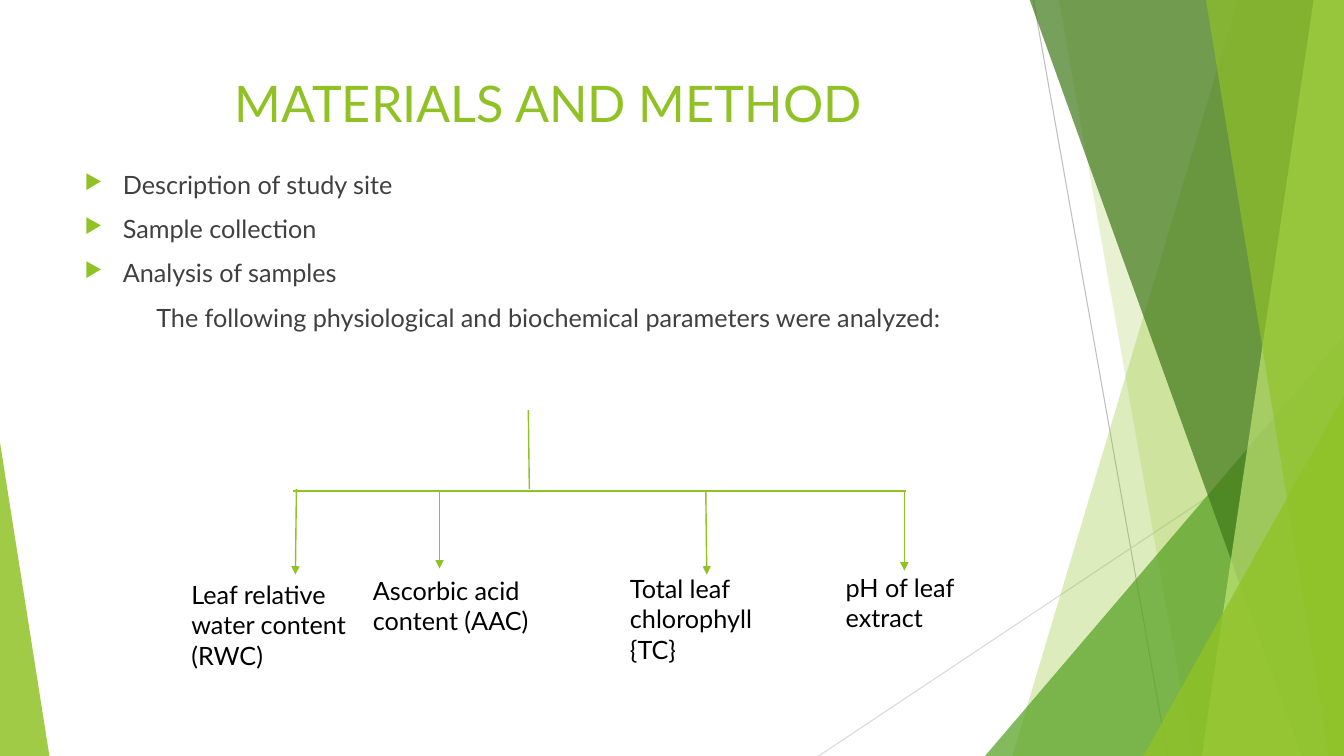
"""Build the "Materials and method" slide with its parameter tree."""
from lxml import etree
from pptx import Presentation
from pptx import util as u
from pptx.dml.color import RGBColor
from pptx.enum import shapes, text
from pptx.oxml.ns import qn

PX = 9144
W, H = 1333, 750
GREEN = RGBColor(0x90, 0xC2, 0x26)
MID_GREEN = RGBColor(0x54, 0xA0, 0x21)
DARK_GREEN = RGBColor(0x3F, 0x78, 0x19)
PALE_GREEN = RGBColor(0xC0, 0xE4, 0x74)
GRAY = RGBColor(0xBF, 0xBF, 0xBF)
LIGHT_GRAY = RGBColor(0xD9, 0xD9, 0xD9)
TEXT_GRAY = RGBColor(0x40, 0x40, 0x40)
BLACK = RGBColor(0, 0, 0)


def write(tf, line, size=18, color=BLACK, align=text.PP_ALIGN.LEFT, before=0, bullet=None, first=True):
    """Write one formatted paragraph into a text frame."""
    tf.word_wrap = True
    tf.vertical_anchor = text.MSO_ANCHOR.TOP
    p = tf.paragraphs[0] if first else tf.add_paragraph()
    p.alignment = align
    p.space_before = u.Pt(before)
    r = p.add_run()
    r.text = line
    r.font.size = u.Pt(size)
    r.font.name = "Lato"
    r.font.color.rgb = color
    if bullet:
        pPr = p._p.get_or_add_pPr()
        pPr.set("marL", str(38 * PX))
        pPr.set("indent", str(-38 * PX))
        clr = etree.SubElement(pPr, qn("a:buClr"))
        etree.SubElement(clr, qn("a:srgbClr"), val=str(GREEN))
        etree.SubElement(pPr, qn("a:buSzPct"), val="80000")
        etree.SubElement(pPr, qn("a:buChar"), char=bullet)


prs = Presentation()
prs.slide_width, prs.slide_height = W * PX, H * PX
s = prs.slides.add_slide(prs.slide_layouts[5])

lines = [
    (1025, 0, 1158, H, GRAY, 0.75, False),
    (W, 403, 812, H, LIGHT_GRAY, 0.75, False),
    (524, 407, 525, 485, GREEN, 1, False),
    (291, 487, 899, 487, GREEN, 1, False),
    (294, 485, 293, 570, GREEN, 1, True),
    (436, 487, 436, 564, GREEN, 1, True),
    (700, 487, 701, 570, GREEN, 1, True),
    (897, 487, 897, 566, GREEN, 1, True),
]
for x1, y1, x2, y2, color, width, arrow in lines:
    ln = s.shapes.add_connector(shapes.MSO_CONNECTOR.STRAIGHT, x1 * PX, y1 * PX, x2 * PX, y2 * PX)
    ln.line.color.rgb = color
    ln.line.width = u.Pt(width)
    if arrow:
        etree.SubElement(ln.line._get_or_add_ln(), qn("a:tailEnd"), type="triangle")
    etree.SubElement(ln._element.spPr, qn("a:effectLst"))

panels = [
    ("band", (1228, 1004), GREEN, 30),
    ("band", (1050, 1183), GREEN, 20),
    ("triangle", (977, 333, 356, 1), MID_GREEN, 72),
    ("band", (1021, 1291), DARK_GREEN, 70),
    ("band", (1303, 1192), PALE_GREEN, 70),
    ("band", (1196, 1318), GREEN, 65),
    ("triangle", (1134, 393, 199, 1), GREEN, 80),
    ("triangle", (0, 439, 49, 0), GREEN, 85),
]
for kind, geometry, color, opacity in panels:
    if kind == "band":
        top_x, bottom_x = geometry
        outline = s.shapes.build_freeform(top_x, -1, scale=PX)
        outline.add_line_segments([(W, -1), (W, H), (bottom_x, H)], close=True)
        sp = outline.convert_to_shape()
    else:
        x, y, w, apex = geometry
        sp = s.shapes.add_shape(shapes.MSO_SHAPE.ISOSCELES_TRIANGLE, x * PX, y * PX, w * PX, (H - y) * PX)
        sp.adjustments[0] = apex
    sp.shadow.inherit = False
    sp.line.fill.background()
    sp.fill.solid()
    sp.fill.fore_color.rgb = color
    clr = sp._element.spPr.find(qn("a:solidFill"))[0]
    etree.SubElement(clr, qn("a:alpha"), val=str(opacity * 1000))

title = s.shapes.title
title.left, title.top, title.width, title.height = 74 * PX, 67 * PX, 940 * PX, 144 * PX
write(title.text_frame, "MATERIALS AND METHOD", size=36, color=GREEN, align=text.PP_ALIGN.CENTER)
s.shapes._spTree.append(title._element)

body = s.shapes.add_textbox(74 * PX, 163 * PX, 940 * PX, 569 * PX).text_frame
for i, step in enumerate(["Description of study site", "Sample collection", "Analysis of samples"]):
    write(body, step, color=TEXT_GRAY, before=10, bullet="▶", first=i == 0)
write(body, "The following physiological and biochemical parameters were analyzed:",
      color=TEXT_GRAY, align=text.PP_ALIGN.CENTER, before=10, first=False)

parameters = [
    (180, 570, 101, "Leaf relative water content (RWC)"),
    (360, 566, 71, "Ascorbic acid content (AAC)"),
    (615, 564, 101, "Total leaf chlorophyll {TC}"),
    (829, 563, 71, "pH of leaf extract"),
]
for x, y, h, label in parameters:
    write(s.shapes.add_textbox(x * PX, y * PX, 186 * PX, h * PX).text_frame, label)

prs.save("out.pptx")
